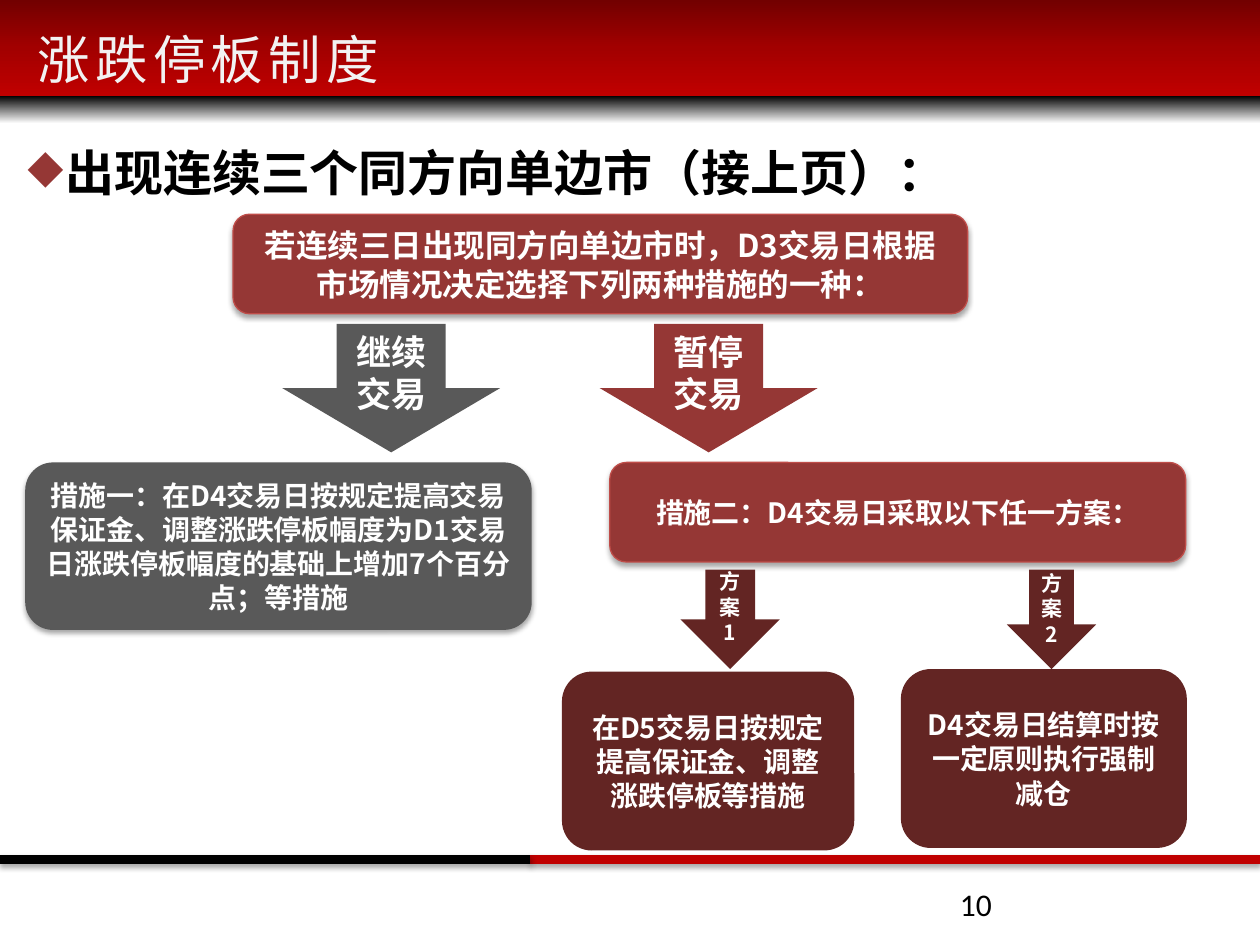
from copy import deepcopy

from lxml.etree import SubElement
from pptx import Presentation
from pptx.dml.color import RGBColor
from pptx.enum.shapes import MSO_CONNECTOR, MSO_SHAPE
from pptx.enum.text import MSO_ANCHOR, PP_ALIGN
from pptx.oxml import parse_xml
from pptx.oxml.ns import nsdecls, qn
from pptx.util import Inches, Pt

CJK_FONT = "Noto Sans CJK SC"
LATIN_FONT = "Calibri"
LINE_RATIO = 1.22  # line height relative to text size

BLACK = RGBColor(0x00, 0x00, 0x00)
WHITE = RGBColor(0xFF, 0xFF, 0xFF)
OFF_WHITE = RGBColor(0xF2, 0xF2, 0xF2)
GRAY = RGBColor(0x59, 0x59, 0x59)
BRIGHT_RED = RGBColor(0xC0, 0x00, 0x00)
MID_RED = RGBColor(0xA2, 0x00, 0x00)
DARK_RED = RGBColor(0x72, 0x00, 0x00)
BRICK = RGBColor(0x95, 0x37, 0x35)
BRICK_EDGE = RGBColor(0xBF, 0x4C, 0x48)
MAROON = RGBColor(0x63, 0x25, 0x23)

SHADOW = (
    f'<a:effectLst {nsdecls("a")}>'
    '<a:outerShdw blurRad="39370" dist="22860" dir="5400000" rotWithShape="0">'
    '<a:srgbClr val="000000"><a:alpha val="35000"/></a:srgbClr>'
    "</a:outerShdw></a:effectLst>"
)


def add_shadow(shape):
    properties = shape._element.spPr
    for effects in properties.findall(qn("a:effectLst")):
        properties.remove(effects)
    properties.append(parse_xml(SHADOW))


def write(frame, text, size, color, bold=False, font=CJK_FONT, align=PP_ALIGN.LEFT):
    """Write one run into the first paragraph and return both."""
    frame.word_wrap = True
    paragraph = frame.paragraphs[0]
    paragraph.alignment = align
    paragraph.line_spacing = Pt(round(size * LINE_RATIO, 1))
    run = paragraph.add_run()
    run.text = text
    run.font.size = Pt(size)
    run.font.bold = bold
    run.font.color.rgb = color
    run.font.name = font
    SubElement(run._r.rPr, qn("a:ea")).set("typeface", font)
    return paragraph, run


def add_block(slide, kind, box, text, size, fill, edge=None, shadow=False, font=CJK_FONT):
    """Filled shape with centred white text."""
    block = slide.shapes.add_shape(kind, *map(Inches, box))
    block.shadow.inherit = False
    block.fill.solid()
    block.fill.fore_color.rgb = fill
    if edge is None:
        block.line.fill.background()
    else:
        block.line.color.rgb = edge
        block.line.width = Pt(0.75)
    if shadow:
        add_shadow(block)
    block.text_frame.vertical_anchor = MSO_ANCHOR.MIDDLE
    write(block.text_frame, text, size, WHITE, True, font, PP_ALIGN.CENTER)


def add_gradient_band(slide, top, height, colors):
    """Full-width band shaded from top to bottom."""
    band = slide.shapes.add_shape(
        MSO_SHAPE.RECTANGLE, 0, Inches(top), Inches(10), Inches(height))
    band.shadow.inherit = False
    band.line.fill.background()
    band.fill.gradient()
    band.fill.gradient_angle = 270
    stop_list = band._element.spPr.find(qn("a:gradFill")).find(qn("a:gsLst"))
    for _ in colors[2:]:
        stop_list.append(deepcopy(stop_list[0]))
    for index, (stop, color) in enumerate(zip(band.fill.gradient_stops, colors)):
        stop.position = index / (len(colors) - 1)
        stop.color.rgb = color


def add_footer_line(slide, start, end, color):
    y = Inches(6.82)
    line = slide.shapes.add_connector(
        MSO_CONNECTOR.STRAIGHT, Inches(start), y, Inches(end), y)
    line.line.color.rgb = color
    line.line.width = Pt(5)
    add_shadow(line)


def add_title(slide, text):
    title = slide.shapes.title
    title.left, title.top, title.width, title.height = map(Inches, (0.2, 0.16, 8.3, 0.84))
    title.text_frame.vertical_anchor = MSO_ANCHOR.TOP
    _, run = write(title.text_frame, text, 30, OFF_WHITE)
    run._r.rPr.set("spc", "300")
    # Bring the title in front of the header bands
    title._element.getparent().append(title._element)


def add_heading(slide, text):
    """Lead line with a diamond bullet."""
    heading = slide.shapes.add_textbox(*map(Inches, (0.12, 1.07, 9.22, 0.61)))
    paragraph, _ = write(heading.text_frame, text, 28, BLACK, True)
    properties = paragraph._p.get_or_add_pPr()
    properties.set("marL", str(Inches(0.3)))
    properties.set("indent", str(-Inches(0.3)))
    bullet_color = SubElement(properties, qn("a:buClr"))
    SubElement(bullet_color, qn("a:srgbClr")).set("val", str(BRICK))
    SubElement(properties, qn("a:buSzPct")).set("val", "95000")
    SubElement(properties, qn("a:buChar")).set("char", "◆")


def add_page_number(slide, number):
    page = slide.shapes.add_textbox(*map(Inches, (7.52, 6.97, 2.33, 0.4)))
    write(page.text_frame, number, 18, BLACK, font=LATIN_FONT)


def main():
    prs = Presentation()
    prs.slide_width, prs.slide_height = Inches(10), Inches(7.5)
    slide = prs.slides.add_slide(prs.slide_layouts[5])

    # Header and footer
    add_gradient_band(slide, 0.76, 0.22, (BLACK, WHITE))
    add_gradient_band(slide, 0, 0.76, (DARK_RED, MID_RED, BRIGHT_RED))
    add_footer_line(slide, 4.21, 10, BRIGHT_RED)
    add_footer_line(slide, 0, 4.21, BLACK)
    add_page_number(slide, "10")
    add_title(slide, "涨跌停板制度")
    add_heading(slide, "出现连续三个同方向单边市（接上页）：")

    # Condition and the two measures
    rounded = MSO_SHAPE.ROUNDED_RECTANGLE
    add_block(slide, rounded, (1.85, 1.7, 5.83, 0.79),
              "若连续三日出现同方向单边市时，D3交易日根据市场情况决定选择下列两种措施的一种：",
              18, BRICK, BRICK_EDGE, True)
    add_block(slide, rounded, (0.2, 3.67, 4.02, 1.33),
              "措施一：在D4交易日按规定提高交易保证金、调整涨跌停板幅度为D1"
              "交易日涨跌停板幅度的基础上增加7个百分点；等措施",
              16, GRAY, shadow=True)
    add_block(slide, rounded, (4.84, 3.67, 4.57, 0.79),
              "措施二：D4交易日采取以下任一方案：", 16, BRICK, BRICK_EDGE, True)

    # Plans under the second measure
    for left, width, text in ((5.4, 0.79, "方案1"), (7.99, 0.71, "方案2")):
        add_block(slide, MSO_SHAPE.DOWN_ARROW, (left, 4.52, width, 0.79), text, 12, MAROON)
    for box, text in (
        ((4.46, 5.33, 2.32, 1.42), "在D5交易日按规定提高保证金、调整涨跌停板等措施"),
        ((7.15, 5.31, 2.27, 1.42), "D4交易日结算时按一定原则执行强制减仓"),
    ):
        add_block(slide, rounded, box, text, 16, MAROON)

    # Arrows to the measures
    for left, text, fill in ((2.24, "继续交易", GRAY), (4.76, "暂停交易", BRICK)):
        add_block(slide, MSO_SHAPE.DOWN_ARROW, (left, 2.57, 1.73, 1.02), text, 20, fill,
                  font=LATIN_FONT)

    prs.save("out.pptx")


if __name__ == "__main__":
    main()
